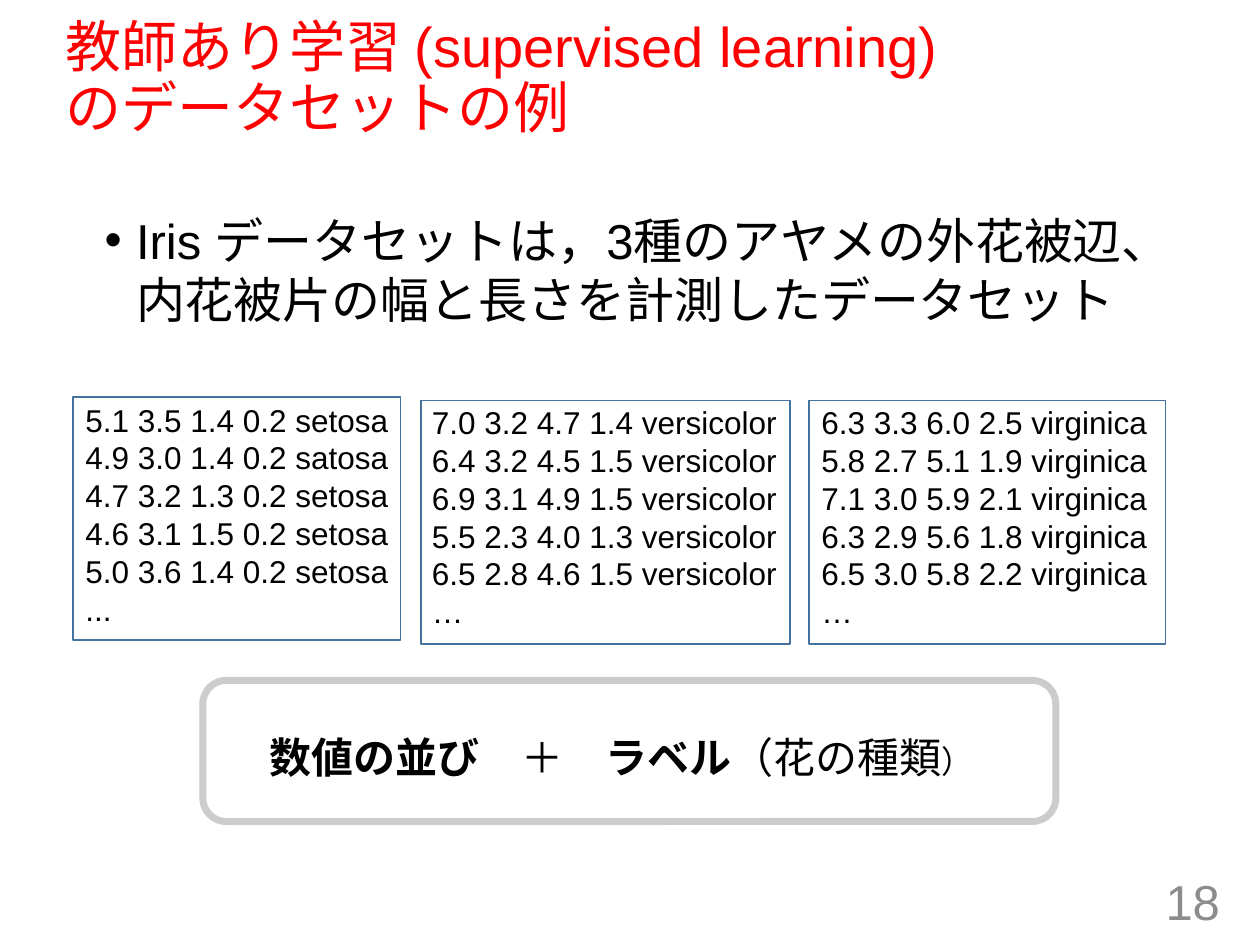
from dataclasses import dataclass

from lxml.etree import SubElement
from pptx import Presentation
from pptx.dml.color import RGBColor
from pptx.enum.shapes import MSO_SHAPE as Shape
from pptx.enum.text import MSO_ANCHOR as Anchor, MSO_AUTO_SIZE as AutoSize, PP_ALIGN as Align
from pptx.oxml.ns import qn
from pptx.util import Inches, Pt


@dataclass(frozen=True)
class Theme:
    """Colours, font and type sizes of the slide."""
    font: str = "Arial"
    title: RGBColor = RGBColor(0xFF, 0x00, 0x00)
    ink: RGBColor = RGBColor(0x00, 0x00, 0x00)
    paper: RGBColor = RGBColor(0xFF, 0xFF, 0xFF)
    number: RGBColor = RGBColor(0x8C, 0x8C, 0x8C)
    frame: RGBColor = RGBColor(0x43, 0x73, 0x9E)
    title_size: int = 32
    body_size: int = 28
    formula_size: int = 24
    sample_size: int = 18


THEME = Theme()

SAMPLES = [
    ((0.58, 3.13, 3.26, 1.92), (0.58, 3.15, 2.6, 1.93), [
        "5.1 3.5 1.4 0.2 setosa", "4.9 3.0 1.4 0.2 satosa",
        "4.7 3.2 1.3 0.2 setosa", "4.6 3.1 1.5 0.2 setosa",
        "5.0 3.6 1.4 0.2 setosa", "..."]),
    ((3.33, 3.15, 3.54, 1.92), (3.34, 3.18, 2.93, 1.93), [
        "7.0 3.2 4.7 1.4 versicolor", "6.4 3.2 4.5 1.5 versicolor",
        "6.9 3.1 4.9 1.5 versicolor", "5.5 2.3 4.0 1.3 versicolor",
        "6.5 2.8 4.6 1.5 versicolor", "…"]),
    ((6.42, 3.15, 3.69, 1.92), (6.42, 3.18, 2.83, 1.93), [
        "6.3 3.3 6.0 2.5 virginica", "5.8 2.7 5.1 1.9 virginica",
        "7.1 3.0 5.9 2.1 virginica", "6.3 2.9 5.6 1.8 virginica",
        "6.5 3.0 5.8 2.2 virginica", "…"]),
]

FORMULA = [
    ("数値の並び", True, THEME.formula_size),
    ("\u3000＋\u3000", False, THEME.formula_size),
    ("ラベル", True, THEME.formula_size),
    ("（花の種類", False, THEME.formula_size),
    ("）", False, THEME.sample_size),
]


def apply(target, values):
    """Set each named attribute of the target."""
    for name, value in values.items():
        setattr(target, name, value)


def inches(box):
    """Turn a box of plain numbers into lengths."""
    return [Inches(length) for length in box]


def style(font, size, colour, bold=False):
    """Give a font the theme face with a size and colour."""
    apply(font, {"name": THEME.font, "size": Pt(size), "bold": bold})
    font.color.rgb = colour


def place(placeholder, box):
    """Move a placeholder to a box and return its text frame."""
    apply(placeholder, dict(zip(("left", "top", "width", "height"), inches(box))))
    frame = placeholder.text_frame
    apply(frame, {"word_wrap": True, "auto_size": AutoSize.NONE})
    return frame


def add_text(slide, box):
    """Add a wrapping text box and return its text frame."""
    frame = slide.shapes.add_textbox(*inches(box)).text_frame
    frame.word_wrap = True
    return frame


def add_frame(slide, kind, box, colour, width):
    """Add an unfilled outline shape."""
    outline = slide.shapes.add_shape(kind, *inches(box))
    outline.shadow.inherit = False
    outline.fill.background()
    outline.line.color.rgb = colour
    outline.line.width = Pt(width)
    return outline


def build_title(slide, box):
    """Write the two-line heading."""
    frame = place(slide.shapes.title, box)
    frame.vertical_anchor = Anchor.MIDDLE
    frame.text = "教師あり学習 (supervised learning)\vのデータセットの例"
    heading = frame.paragraphs[0]
    apply(heading, {"alignment": Align.LEFT, "line_spacing": 0.9})
    style(heading.font, THEME.title_size, THEME.title)
    for run in heading.runs:
        style(run.font, THEME.title_size, THEME.title)


def build_summary(slide, box):
    """Write the bulleted description of the data set."""
    frame = place(slide.placeholders[1], box)
    frame.text = "Iris データセットは，3種のアヤメの外花被辺、内花被片の幅と長さを計測したデータセット"
    summary = frame.paragraphs[0]
    properties = summary._p.get_or_add_pPr()
    properties.set("marL", str(Inches(0.25)))
    properties.set("indent", str(-Inches(0.25)))
    SubElement(properties, qn("a:buFont"), typeface=THEME.font)
    SubElement(properties, qn("a:buChar"), char="•")
    summary.space_before = Pt(0)
    style(summary.runs[0].font, THEME.body_size, THEME.ink)


def build_number(slide, box):
    """Write the slide number."""
    frame = add_text(slide, box)
    frame.vertical_anchor = Anchor.MIDDLE
    frame.text = "18"
    number = frame.paragraphs[0]
    number.alignment = Align.RIGHT
    style(number.runs[0].font, THEME.body_size, THEME.number)


def build_formula(slide, panel_box, text_box):
    """Draw the rounded panel and what each record consists of."""
    panel = add_frame(slide, Shape.ROUNDED_RECTANGLE, panel_box, THEME.ink, 4)
    panel.fill.solid()
    panel.fill.fore_color.rgb = THEME.paper
    ink = panel.line._ln.find(qn("a:solidFill"))[0]
    SubElement(ink, qn("a:alpha"), val="20000")
    formula = add_text(slide, text_box).paragraphs[0]
    for words, bold, size in FORMULA:
        run = formula.add_run()
        run.text = words
        style(run.font, size, THEME.ink, bold)


def build_sample(slide, text_box, frame_box, records):
    """List the records of one species inside a thin frame."""
    listing = add_text(slide, text_box)
    listing.text = "\n".join(records)
    for record in listing.paragraphs:
        style(record.runs[0].font, THEME.sample_size, THEME.ink)
    add_frame(slide, Shape.RECTANGLE, frame_box, THEME.frame, 1)


def main():
    """Build and save the slide."""
    deck = Presentation()
    apply(deck, {"slide_width": Inches(10), "slide_height": Inches(7.5)})
    slide = deck.slides.add_slide(deck.slide_layouts[1])
    build_title(slide, (0.42, 0.38, 8.73, 0.51))
    build_summary(slide, (0.73, 1.62, 8.73, 1.19))
    build_number(slide, (7.53, 6.95, 2.25, 0.4))
    build_formula(slide, (1.61, 5.4, 6.77, 1.12), (2.04, 5.76, 8.07, 0.5))
    for text_box, frame_box, records in SAMPLES:
        build_sample(slide, text_box, frame_box, records)
    deck.save("out.pptx")


if __name__ == "__main__":
    main()
